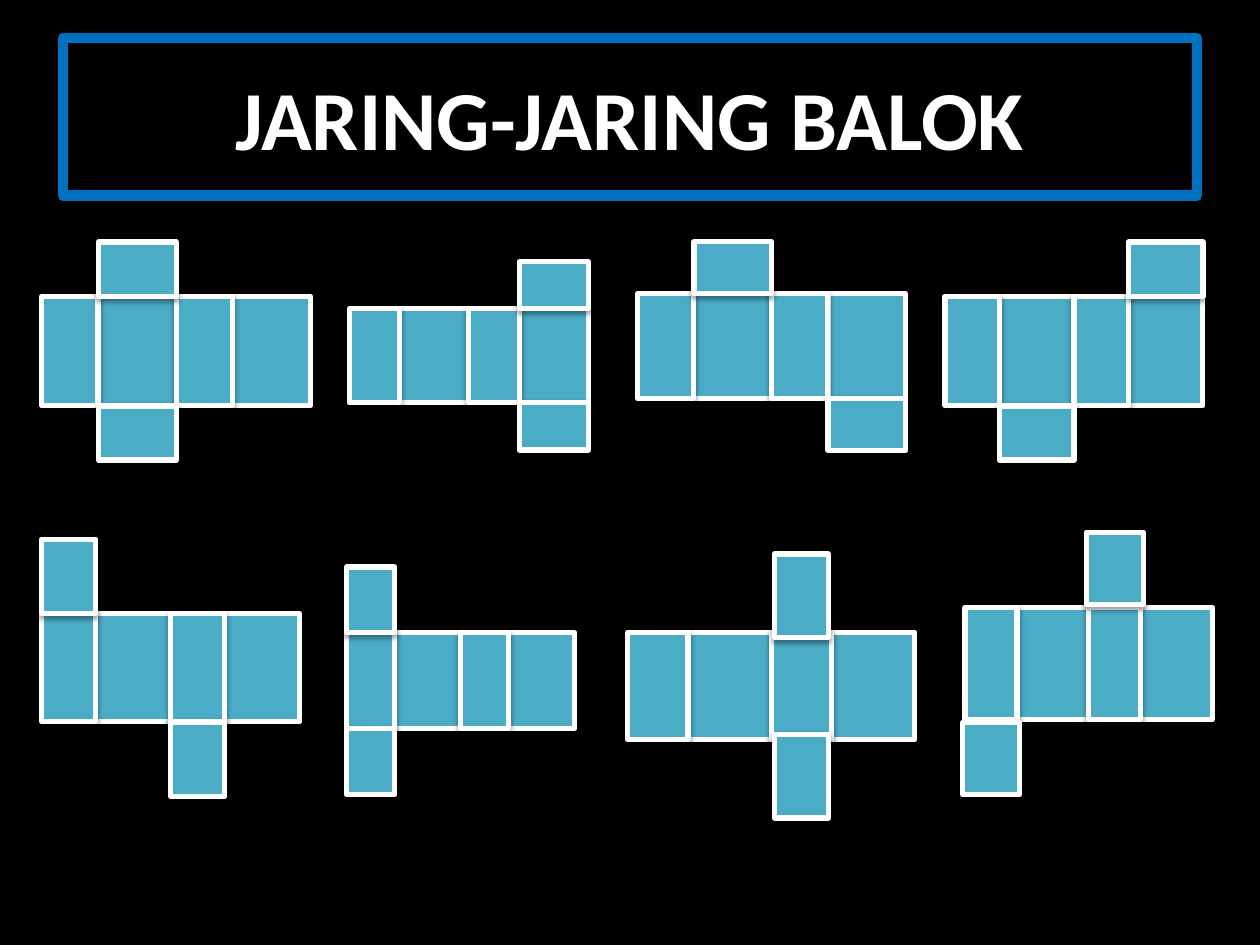
from lxml.etree import SubElement
from pptx import Presentation
from pptx.dml.color import RGBColor as RGB
from pptx.enum.shapes import MSO_SHAPE as SHAPE
from pptx.enum.text import MSO_ANCHOR as ANCHOR, PP_ALIGN as ALIGN
from pptx.oxml.ns import qn
from pptx.util import Pt

HEX = {"back": "000000", "frame": "0070C0", "face": "4BACC6",
       "edge": "FFFFFF", "text": "FFFFFF", "shade": "000000"}


def write(shape, text, size=48, font="Calibri", color="text", bold=True):
    frame = shape.text_frame
    frame.word_wrap = True
    frame.vertical_anchor = ANCHOR.MIDDLE
    para = frame.paragraphs[0]
    para.alignment = ALIGN.CENTER
    run = para.add_run()
    run.text = text
    run.font.size, run.font.name, run.font.bold = Pt(size), font, bold
    run.font.color.rgb = RGB.from_string(HEX[color])


def add_face(net, mid_x, mid_y, wide, high, turn=0):
    """Add a face of the given unturned size around its middle."""
    face = net.shapes.add_shape(SHAPE.RECTANGLE, Pt(mid_x - wide / 2),
                                Pt(mid_y - high / 2), Pt(wide), Pt(high))
    face.rotation = turn
    face.fill.solid()
    face.fill.fore_color.rgb = RGB.from_string(HEX["face"])
    face.line.color.rgb = RGB.from_string(HEX["edge"])
    face.line.width = Pt(3)
    face.shadow.inherit = False
    effects = face._element.spPr.find(qn("a:effectLst"))
    shade = SubElement(effects, qn("a:outerShdw"), blurRad=str(Pt(3.1)),
                       dist=str(Pt(1.6)), dir="5400000", rotWithShape="0")
    color = SubElement(shade, qn("a:srgbClr"), val=HEX["shade"])
    SubElement(color, qn("a:alpha"), val="38000")


deck = Presentation()
deck.slide_width, deck.slide_height = Pt(720), Pt(540)
slide = deck.slides.add_slide(deck.slide_layouts[5])
slide.background.fill.solid()
slide.background.fill.fore_color.rgb = RGB.from_string(HEX["back"])

title = slide.shapes.title
title.left, title.top, title.width, title.height = Pt(36), Pt(21.6), Pt(648), Pt(90)
title.line.color.rgb = RGB.from_string(HEX["frame"])
title.line.width = Pt(6)
write(title, "JARING-JARING BALOK")

# left, top, narrow side, wide side, height of the strip;
# reach of a flap, its unturned width and height, its turn;
# columns of the upper and the lower flap
nets = [
    (23.9, 169.3, 32.2, 44.6, 62.6, 31, 44.6, 31, 180, 1, 1),
    (364.3, 167.8, 32.2, 44.4, 59.8, 29.7, 44.4, 29.7, 180, 1, 3),
    (23.8, 350.6, 31, 42.7, 61.9, 42.5, 42.5, 31, 270, 0, 2),
    (198, 361.6, 27.6, 37.6, 54.7, 37.6, 37.6, 27.6, 270, 0, 0),
    (358.6, 361.4, 34.6, 47.5, 61.2, 41.8, 47.8, 31, 270, 2, 2),
    (551.5, 347, 29.7, 41, 64.1, 44.6, 41.2, 32.6, 270, 2, 0),
    (540, 169.3, 31, 42.7, 62.6, 31, 42.7, 31, 180, 3, 1),
    (199.6, 176.4, 28.8, 39.5, 53.8, 27, 39.5, 27, 180, 3, 3),
]
for left, top, thin, broad, high, reach, wide, deep, turn, up, down in nets:
    net = slide.shapes.add_group_shape()
    widths = [thin, broad, thin, broad]
    mids = [left + sum(widths[:i]) + w / 2 for i, w in enumerate(widths)]
    for i in (1, 0, 3, 2):
        add_face(net, mids[i], top + high / 2, widths[i], high)
    add_face(net, mids[up], top - reach / 2, wide, deep, turn)
    add_face(net, mids[down], top + high + reach / 2, wide, deep, turn)

deck.save("out.pptx")
